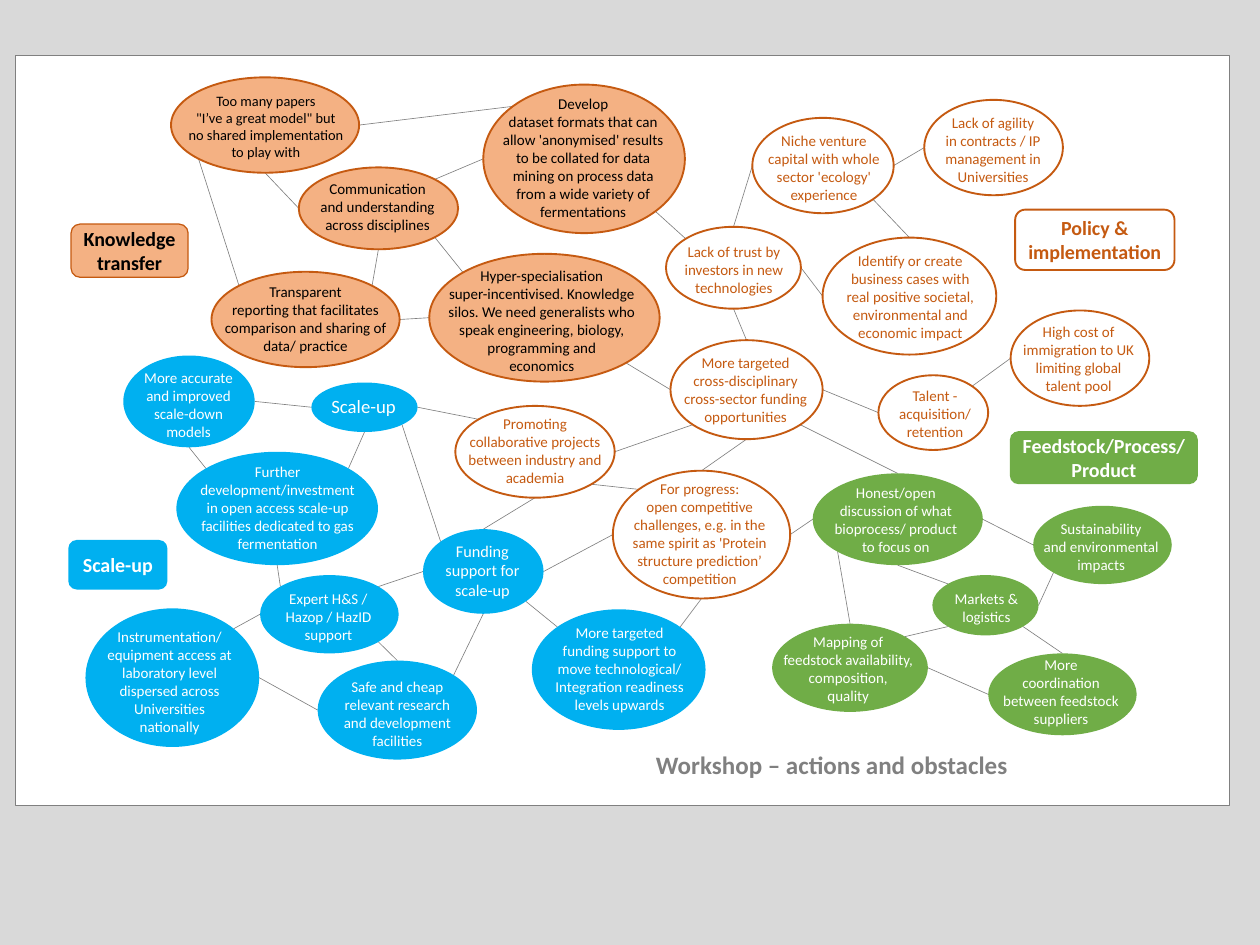
from math import cos, pi, sin

from lxml.etree import SubElement
from pptx import Presentation
from pptx.dml.color import RGBColor
from pptx.enum.shapes import MSO_CONNECTOR, MSO_SHAPE
from pptx.enum.text import MSO_ANCHOR, MSO_AUTO_SIZE, PP_ALIGN
from pptx.oxml.ns import qn
from pptx.util import Inches, Pt

GREY, ORANGE, BLUE, GREEN = "808080", "C55A11", "00B0F0", "70AD47"
PEACH, WHITE, BLACK = "F4B183", "FFFFFF", "000000"
SITES = ["T", "TL", "L", "BL", "B", "BR", "R", "TR"]

POLICY = (None, ORANGE, ORANGE)
SCALE = (BLUE, None, WHITE)
KNOWLEDGE = (PEACH, ORANGE, BLACK)
FEEDSTOCK = (GREEN, None, WHITE)

BUBBLES = {
    "agility": (POLICY, (10.27, 1.11, 1.54, 1.06), (10.23, 1.21, 1.61, 0.91), "Lack of agility\nin contracts / IP management in Universities"),
    "venture": (POLICY, (8.36, 1.31, 1.57, 1.06), (8.35, 1.41, 1.61, 0.91), "Niche venture capital with whole sector 'ecology' experience"),
    "cases": (POLICY, (9.14, 2.64, 1.93, 1.3), (9.29, 2.75, 1.65, 1.1), "Identify or create business cases with real positive societal, environmental and economic impact"),
    "immigration": (POLICY, (11.23, 3.45, 1.54, 1.06), (11.2, 3.53, 1.57, 0.91), "High cost of immigration to UK limiting global talent pool"),
    "targeted": (POLICY, (7.45, 3.78, 1.69, 1.1), (7.5, 3.88, 1.57, 0.91), "More targeted cross-disciplinary cross-sector funding opportunities"),
    "trust": (POLICY, (7.4, 2.52, 1.5, 0.91), (7.37, 2.65, 1.57, 0.71), "Lack of trust by investors in new technologies"),
    "talent": (POLICY, (9.76, 4.17, 1.22, 0.83), (9.84, 4.24, 1.1, 0.71), "Talent - acquisition/ retention"),
    "progress": (POLICY, (6.81, 5.23, 1.97, 1.42), (6.87, 5.28, 1.81, 1.31), "For progress:\nopen competitive challenges, e.g. in the same spirit as 'Protein structure prediction’\ncompetition"),
    "promoting": (POLICY, (5.06, 4.51, 1.77, 1.02), (5.04, 4.56, 1.81, 0.91), "Promoting collaborative projects between industry and academia"),
    "funding": (SCALE, (4.7, 5.88, 1.34, 0.94), (4.77, 5.96, 1.18, 0.76), "Funding support for scale-up"),
    "readiness": (SCALE, (5.91, 6.77, 1.93, 1.34), (5.96, 6.88, 1.85, 1.11), "More targeted\nfunding support to move technological/ Integration readiness levels upwards"),
    "safe": (SCALE, (3.53, 7.34, 1.77, 1.1), (3.59, 7.48, 1.65, 0.91), "Safe and cheap relevant research and development facilities"),
    "expert": (SCALE, (2.89, 6.39, 1.54, 0.87), (3.02, 6.5, 1.26, 0.71), "Expert H&S /\nHazop / HazID support"),
    "instruments": (SCALE, (0.95, 6.76, 1.93, 1.54), (1.06, 6.92, 1.65, 1.31), "Instrumentation/ equipment access at laboratory level dispersed across Universities nationally"),
    "further": (SCALE, (1.96, 5.02, 2.24, 1.26), (2.04, 5.09, 2.09, 1.11), "Further\ndevelopment/investment\nin open access scale-up facilities dedicated to gas fermentation"),
    "scaleup": (SCALE, (3.46, 4.25, 1.18, 0.55), (3.52, 4.34, 1.04, 0.35), "Scale-up"),
    "accurate": (SCALE, (1.37, 3.95, 1.46, 1.02), (1.45, 4.04, 1.29, 0.91), "More accurate and improved scale-down models"),
    "papers": (KNOWLEDGE, (1.9, 0.86, 2.09, 1.06), (1.99, 0.97, 1.93, 1.07), "Too many papers\n\"I’ve a great model\" but no shared implementation to play with"),
    "communication": (KNOWLEDGE, (3.32, 1.86, 1.77, 0.91), (3.27, 1.95, 1.85, 0.71), "Communication\nand understanding across disciplines"),
    "develop": (KNOWLEDGE, (5.37, 0.94, 2.24, 1.65), (5.42, 1, 2.12, 1.51), "Develop\ndataset formats that can allow 'anonymised' results to be collated for data mining on process data from a wide variety of fermentations"),
    "transparent": (KNOWLEDGE, (2.35, 3.02, 2.09, 1.06), (2.39, 3.09, 2.01, 0.91), "Transparent\nreporting that facilitates comparison and sharing of data/ practice"),
    "honest": (FEEDSTOCK, (9.03, 5.26, 1.89, 1.02), (9.11, 5.32, 1.69, 0.91), "Honest/open\ndiscussion of what bioprocess/ product to focus on"),
    "mapping": (FEEDSTOCK, (8.58, 6.93, 1.73, 0.98), (8.6, 6.98, 1.65, 0.91), "Mapping of\nfeedstock availability, composition,\nquality"),
    "sustainability": (FEEDSTOCK, (11.48, 5.62, 1.54, 0.87), (11.37, 5.72, 1.73, 0.71), "Sustainability\nand environmental impacts"),
    "markets": (FEEDSTOCK, (10.36, 6.39, 1.18, 0.67), (10.27, 6.5, 1.38, 0.5), "Markets & logistics"),
    "coordination": (FEEDSTOCK, (10.98, 7.26, 1.65, 0.91), (11.02, 7.23, 1.54, 0.91), "More\ncoordination\nbetween feedstock suppliers"),
    "hyper": (KNOWLEDGE, (4.77, 2.82, 2.56, 1.42), (4.86, 2.91, 2.32, 1.34), "Hyper-specialisation\nsuper-incentivised. Knowledge silos. We need generalists who speak engineering, biology, programming and\neconomics"),
}
TEXT_SIZES = {"funding": 13, "scaleup": 15, "papers": 11.5}

LINKS = [
    ("talent", "TR", "immigration", "L"),
    ("progress", "T", "targeted", "B"),
    ("sustainability", "BL", "markets", "R"),
    ("coordination", "T", "markets", "BR"),
    ("mapping", "TR", "markets", "BL"),
    ("honest", "BL", "mapping", "T"),
    ("honest", "B", "markets", "TL"),
    ("honest", "R", "sustainability", "L"),
    ("mapping", "R", "coordination", "L"),
    ("papers", "BL", "transparent", "TL"),
    ("papers", "R", "develop", "TL"),
    ("transparent", "TR", "communication", "B"),
    ("communication", "BR", "hyper", "TL"),
    ("communication", "TR", "develop", "L"),
    ("transparent", "R", "hyper", "L"),
    ("papers", "B", "communication", "L"),
    ("agility", "L", "venture", "R"),
    ("venture", "L", "trust", "T"),
    ("venture", "BR", "cases", "T"),
    ("trust", "R", "cases", "L"),
    ("trust", "B", "targeted", "T"),
    ("talent", "L", "targeted", "R"),
    ("hyper", "BR", "targeted", "L"),
    ("safe", "T", "expert", "BR"),
    ("instruments", "R", "safe", "L"),
    ("instruments", "TR", "expert", "L"),
    ("safe", "TR", "funding", "B"),
    ("expert", "TR", "funding", "L"),
    ("readiness", "TL", "funding", "BR"),
    ("develop", "BR", "trust", "TL"),
    ("progress", "R", "honest", "L"),
    ("honest", "T", "targeted", "BR"),
    ("funding", "TL", "scaleup", "BR"),
    ("accurate", "R", "scaleup", "L"),
    ("accurate", "B", "further", "TL"),
    ("readiness", "TR", "progress", "B"),
    ("funding", "T", "promoting", "B"),
    ("promoting", "BR", "progress", "TL"),
    ("targeted", "BL", "promoting", "R"),
    ("further", "TR", "scaleup", "B"),
    ("scaleup", "R", "promoting", "TL"),
    ("funding", "R", "progress", "L"),
    ("expert", "TL", "further", "B"),
]

LABELS = [
    (POLICY, (11.28, 2.33, 1.77, 0.67), "Policy & implementation", 1.5),
    (FEEDSTOCK, (11.22, 4.79, 2.09, 0.59), "Feedstock/Process/\nProduct", 1),
    (KNOWLEDGE, (0.79, 2.49, 1.3, 0.59), "Knowledge transfer", 1),
    (SCALE, (0.76, 6, 1.1, 0.55), "Scale-up", 1),
]


def rgb(value):
    return RGBColor.from_string(value)


def add_outline(shapes, kind, box, fill, line, width):
    sp = shapes.add_shape(kind, *map(Inches, box))
    sp.shadow.inherit = False
    for part, color in ((sp.fill, fill), (sp.line.fill, line)):
        if color:
            part.solid()
            part.fore_color.rgb = rgb(color)
        else:
            part.background()
    if line:
        sp.line.width = Pt(width)
    return sp


def write(tf, text, size, color, bold=False, align=PP_ALIGN.CENTER):
    tf.word_wrap = True
    tf.text = text
    for p in tf.paragraphs:
        p.alignment = align
        for r in p.runs:
            r.font.name = "Calibri"
            r.font.size = Pt(size)
            r.font.bold = bold
            r.font.color.rgb = rgb(color)


def add_text(shapes, box, *style):
    tf = shapes.add_textbox(*map(Inches, box)).text_frame
    write(tf, *style)
    tf.auto_size = MSO_AUTO_SIZE.SHAPE_TO_FIT_TEXT


def site_point(name, site):
    x, y, w, h = BUBBLES[name][1]
    angle = SITES.index(site) * pi / 4
    return Inches(x + w / 2 * (1 - sin(angle))), Inches(y + h / 2 * (1 - cos(angle)))


def add_link(s, start, start_site, end, end_site):
    cxn = s.shapes.add_connector(
        MSO_CONNECTOR.STRAIGHT, *site_point(start, start_site), *site_point(end, end_site))
    cxn.line.color.rgb = rgb(GREY)
    cxn.line.width = Pt(0.5)
    SubElement(cxn._element.spPr, qn("a:effectLst"))


def add_label(s, theme, box, text, width):
    fill, line, color = theme
    sp = add_outline(s.shapes, MSO_SHAPE.ROUNDED_RECTANGLE, box, fill, line, width)
    write(sp.text_frame, text, 16, color, True)
    sp.text_frame.vertical_anchor = MSO_ANCHOR.MIDDLE


def add_bubble(s, theme, box, text_box, text, size):
    fill, line, color = theme
    group = s.shapes.add_group_shape()
    add_outline(group.shapes, MSO_SHAPE.OVAL, box, fill, line, 1.5)
    add_text(group.shapes, text_box, text, size, color)


def main():
    prs = Presentation()
    prs.slide_width, prs.slide_height = Inches(14), Inches(10.5)
    s = prs.slides.add_slide(prs.slide_layouts[6])
    s.background.fill.solid()
    s.background.fill.fore_color.rgb = rgb("D9D9D9")
    add_outline(s.shapes, MSO_SHAPE.RECTANGLE, (0.17, 0.62, 13.49, 8.33), WHITE, GREY, 1)
    for link in LINKS:
        add_link(s, *link)
    for label in LABELS:
        add_label(s, *label)
    add_text(s.shapes, (7.19, 8.28, 4.29, 0.44), "Workshop – actions and obstacles",
             20, GREY, True, PP_ALIGN.LEFT)
    for name, bubble in BUBBLES.items():
        add_bubble(s, *bubble, TEXT_SIZES.get(name, 12))
    prs.save("out.pptx")


if __name__ == "__main__":
    main()
